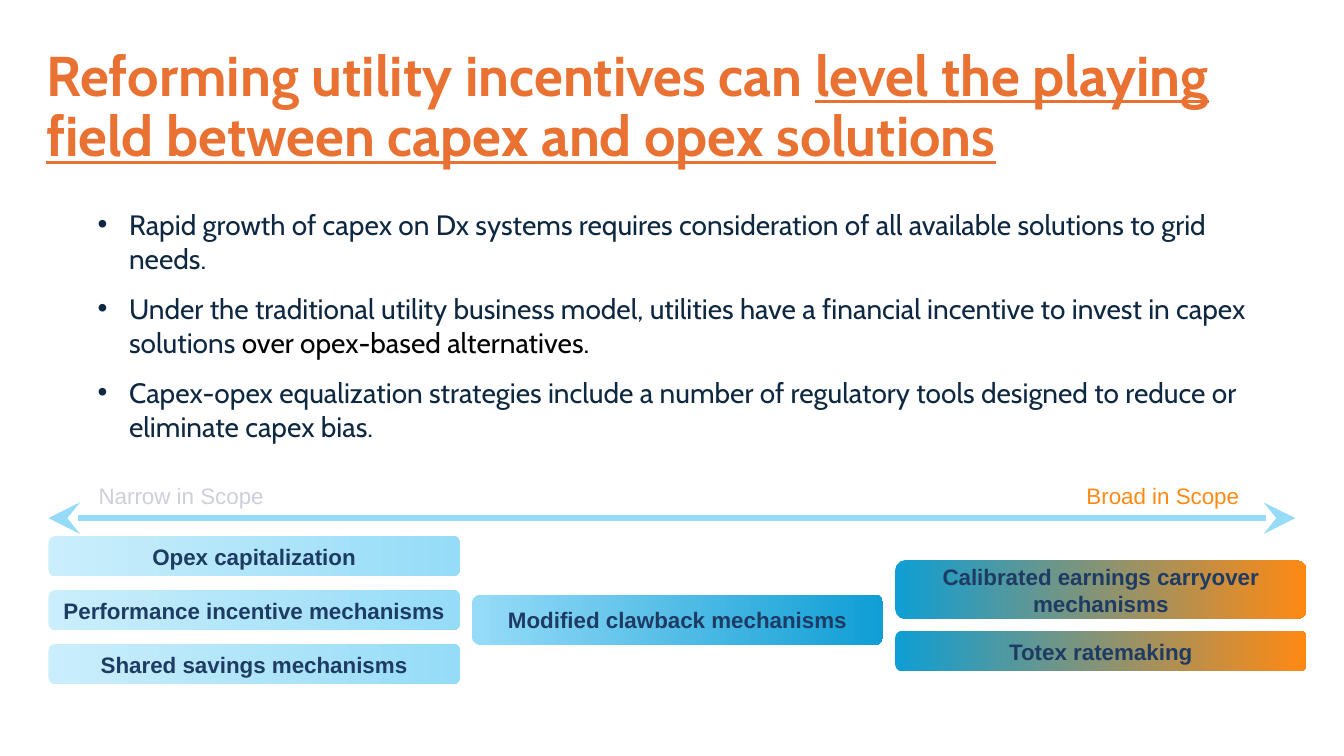
from lxml.etree import SubElement
from pptx import Presentation
from pptx.dml.color import RGBColor
from pptx.enum.shapes import MSO_CONNECTOR, MSO_SHAPE
from pptx.enum.text import MSO_ANCHOR, PP_ALIGN
from pptx.oxml.ns import qn
from pptx.util import Pt

ORANGE = RGBColor(0xE9, 0x71, 0x32)
AMBER = RGBColor(0xFF, 0x89, 0x13)
NAVY = RGBColor(0x0E, 0x28, 0x41)
LABEL_BLUE = RGBColor(0x1E, 0x3B, 0x63)
BLACK = RGBColor(0, 0, 0)
GREY = RGBColor(0xCD, 0xD0, 0xDA)
PALE = RGBColor(0xCA, 0xEE, 0xFB)
SKY = RGBColor(0x96, 0xDC, 0xF8)
BLUE = RGBColor(0x0F, 0x9E, 0xD5)

TITLE = {"name": "Cabin", "size": Pt(40), "bold": True}
BODY = {"name": "Cabin", "size": Pt(20)}
SCOPE = {"name": "Arial", "size": Pt(16)}
MECHANISM = {**SCOPE, "bold": True}


class ScopeSlide:
    def __init__(self, slide):
        self.slide = slide
        self.hanging = Pt(22.5)
        self.bullet_gap = Pt(12)

    def run(self, paragraph, text, style, color, **extra):
        run = paragraph.add_run()
        run.text = text
        for key, value in {**style, **extra}.items():
            setattr(run.font, key, value)
        run.font.color.rgb = color

    def frame(self, left, top, width, height, anchor=MSO_ANCHOR.TOP):
        box = self.slide.shapes.add_textbox(Pt(left), Pt(top), Pt(width), Pt(height))
        box.text_frame.word_wrap = True
        box.text_frame.vertical_anchor = anchor
        return box.text_frame

    def title(self, plain, underlined):
        heading = self.frame(26, 25.2, 844.5, 104.4, MSO_ANCHOR.MIDDLE).paragraphs[0]
        heading.line_spacing = 0.9
        self.run(heading, plain, TITLE, ORANGE)
        self.run(heading, underlined, TITLE, ORANGE, underline=True)

    def bullets(self, points):
        body = self.frame(62.6, 144.7, 835.2, 177)
        for index, runs in enumerate(points):
            point = body.add_paragraph() if index else body.paragraphs[0]
            point.space_after = self.bullet_gap
            props = point._p.get_or_add_pPr()
            props.set("marL", str(self.hanging))
            props.set("indent", str(-self.hanging))
            SubElement(props, qn("a:buFont"), typeface="Arial")
            SubElement(props, qn("a:buChar"), char="•")
            for text, color in runs:
                self.run(point, text, BODY, color)

    def scope_label(self, left, text, color):
        label = self.frame(left, 340.5, 240, 26.6).paragraphs[0]
        label.alignment = PP_ALIGN.CENTER
        self.run(label, text, SCOPE, color)

    def scope_arrow(self, left, right, y):
        arrow = self.slide.shapes.add_connector(
            MSO_CONNECTOR.STRAIGHT, Pt(left), Pt(y), Pt(right), Pt(y))
        arrow.line.color.rgb = SKY
        arrow.line.width = Pt(4.5)
        line = arrow.line._get_or_add_ln()
        for end in ("a:headEnd", "a:tailEnd"):
            SubElement(line, qn(end), type="stealth", w="lg", len="lg")
        SubElement(arrow._element.spPr, qn("a:effectLst"))

    def mechanism(self, left, top, height, text, colors):
        box = self.slide.shapes.add_shape(
            MSO_SHAPE.ROUNDED_RECTANGLE, Pt(left), Pt(top), Pt(293.8), Pt(height))
        box.shadow.inherit = False
        box.line.fill.background()
        box.fill.gradient()
        box.fill.gradient_angle = 0
        for stop, color in zip(box.fill.gradient_stops, colors):
            stop.color.rgb = color
        box.text_frame.word_wrap = True
        box.text_frame.vertical_anchor = MSO_ANCHOR.MIDDLE
        label = box.text_frame.paragraphs[0]
        label.alignment = PP_ALIGN.CENTER
        self.run(label, text, MECHANISM, LABEL_BLUE)


def main():
    deck = Presentation()
    deck.slide_width, deck.slide_height = Pt(960), Pt(540)
    page = ScopeSlide(deck.slides.add_slide(deck.slide_layouts[6]))

    # Title and arguments
    page.title("Reforming utility incentives can ",
               "level the playing field between capex and opex solutions")
    page.bullets([
        [("Rapid growth of capex on Dx systems requires consideration of all "
          "available solutions to grid needs.", NAVY)],
        [("Under the traditional utility business model, utilities have a financial "
          "incentive to invest in capex solutions", NAVY),
         (" over opex-based alternatives.", BLACK)],
        [("Capex-opex equalization strategies include a number of regulatory tools "
          "designed to reduce or eliminate capex bias.", NAVY)],
    ])

    # Scope scale
    page.scope_arrow(34.6, 925.2, 370.1)
    page.scope_label(9.4, "Narrow in Scope", GREY)
    page.scope_label(710.6, "Broad in Scope", AMBER)

    # Mechanisms, from narrow to broad
    narrow, middle, broad = (34.6 + 302.4 * column for column in range(3))
    for row, text in enumerate(["Opex capitalization",
                                "Performance incentive mechanisms",
                                "Shared savings mechanisms"]):
        page.mechanism(narrow, 383 + 38.5 * row, 28.8, text, (PALE, SKY))
    page.mechanism(middle, 424.8, 36, "Modified clawback mechanisms", (SKY, BLUE))
    page.mechanism(broad, 400.3, 41.8, "Calibrated earnings carryover mechanisms",
                   (BLUE, AMBER))
    page.mechanism(broad, 450.7, 28.8, "Totex ratemaking", (BLUE, AMBER))

    deck.save("out.pptx")


if __name__ == "__main__":
    main()
